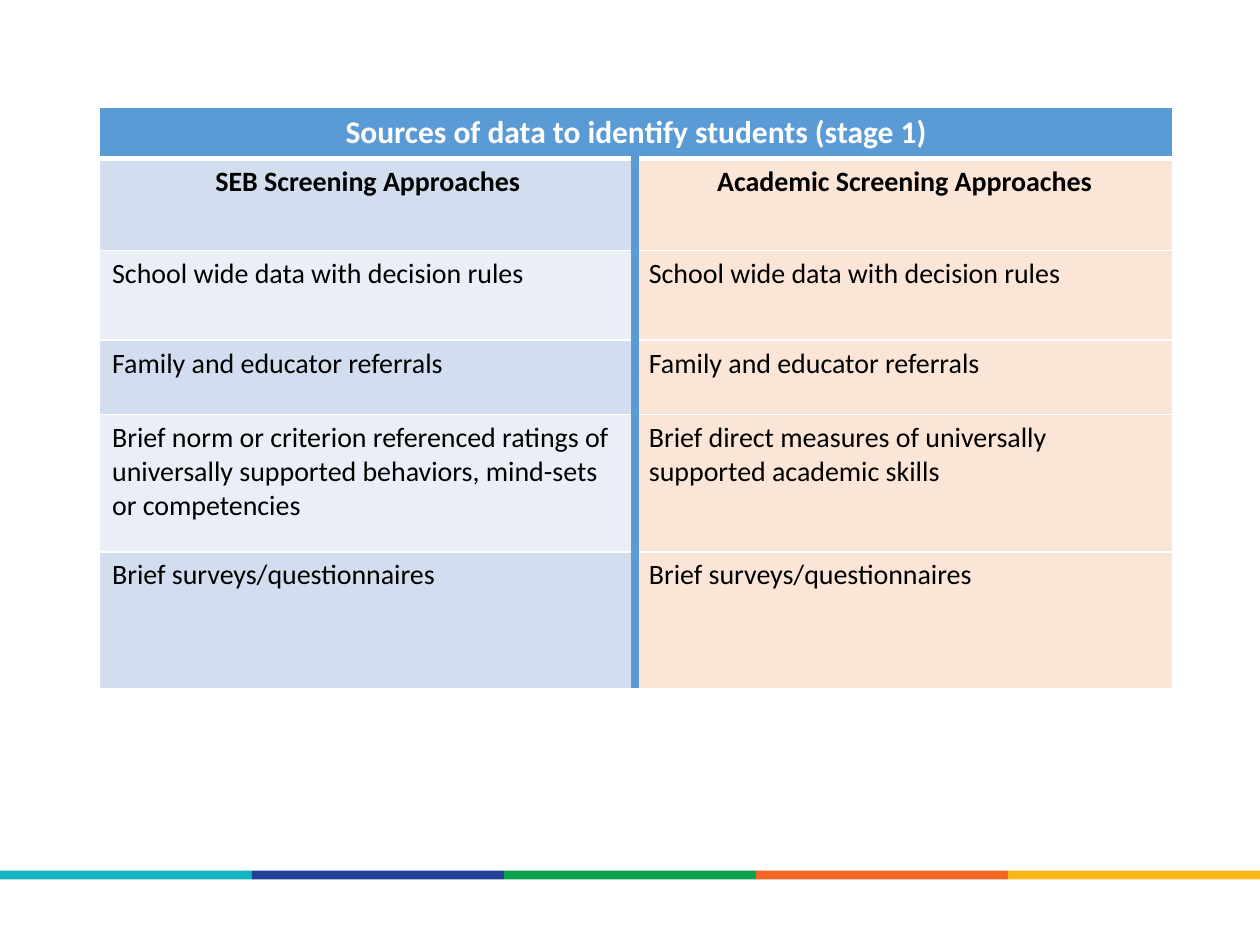
from lxml import etree
from pptx import Presentation
from pptx.dml.color import RGBColor
from pptx.enum.shapes import MSO_CONNECTOR, MSO_SHAPE
from pptx.enum.text import PP_ALIGN
from pptx.oxml.ns import qn
from pptx.util import Inches, Pt

# Content
TITLE = "Sources of data to identify students (stage 1)"
HEADINGS = ("SEB Screening Approaches", "Academic Screening Approaches")
APPROACHES = [
    ("School wide data with decision rules", "School wide data with decision rules"),
    ("Family and educator referrals", "Family and educator referrals"),
    ("Brief norm or criterion referenced ratings of universally supported "
     "behaviors, mind-sets or competencies",
     "Brief direct measures of universally supported academic skills"),
    ("Brief surveys/questionnaires", "Brief surveys/questionnaires"),
]

THEME = {
    "font": "Calibri", "title_size": 18, "body_size": 16,
    "blue": "5B9BD5", "white": "FFFFFF", "black": "000000",
    "seb_bands": ("D2DEEF", "EAEFF7"), "academic": "FBE5D6",
    "stripes": ("14B4C0", "20409A", "0BA14B", "F26522", "F9B817"),
}

# Layout, in inches
SLIDE_W, SLIDE_H = 10, 7.5
TABLE_LEFT, TABLE_TOP, COLUMN_W = 0.79, 0.85, 4.26
ROW_HEIGHTS = (0.41, 0.73, 0.71, 0.59, 1.09, 1.09)
STRIPE_TOP, STRIPE_H = 6.91, 0.07
DIVIDER_X, DIVIDER_TOP, DIVIDER_BOTTOM = 5.04, 1.23, 5.46


def rgb(value):
    return RGBColor.from_string(value)


def set_borders(cell, bottom=1, top=1):
    props = cell._tc.get_or_add_tcPr()
    for side, width in (("L", 1), ("R", 1), ("T", top), ("B", bottom)):
        line = etree.SubElement(props, qn(f"a:ln{side}"), w=str(Pt(width)))
        fill = etree.SubElement(line, qn("a:solidFill"))
        etree.SubElement(fill, qn("a:srgbClr"), val=THEME["white"])


def style_cell(cell, text, fill, color="black", size="body_size", heading=False):
    cell.fill.solid()
    cell.fill.fore_color.rgb = rgb(fill)
    cell.text = text
    paragraph = cell.text_frame.paragraphs[0]
    paragraph.alignment = PP_ALIGN.CENTER if heading else PP_ALIGN.LEFT
    font = paragraph.font
    font.name = THEME["font"]
    font.size = Pt(THEME[size])
    font.bold = heading
    font.color.rgb = rgb(THEME[color])


def add_stripes(slide):
    width = SLIDE_W / len(THEME["stripes"])
    for i, color in enumerate(THEME["stripes"]):
        stripe = slide.shapes.add_shape(
            MSO_SHAPE.RECTANGLE, Inches(i * width), Inches(STRIPE_TOP),
            Inches(width), Inches(STRIPE_H))
        stripe.shadow.inherit = False
        stripe.fill.solid()
        stripe.fill.fore_color.rgb = rgb(color)
        stripe.line.fill.background()


def add_sources_table(slide):
    table = slide.shapes.add_table(
        len(ROW_HEIGHTS), 2, Inches(TABLE_LEFT), Inches(TABLE_TOP),
        Inches(2 * COLUMN_W), Inches(sum(ROW_HEIGHTS))).table
    for column in table.columns:
        column.width = Inches(COLUMN_W)
    for row, height in zip(table.rows, ROW_HEIGHTS):
        row.height = Inches(height)

    # Title row across both columns
    title = table.cell(0, 0)
    title.merge(table.cell(0, 1))
    for col in range(2):
        set_borders(table.cell(0, col), bottom=3)
    style_cell(title, TITLE, THEME["blue"], "white", "title_size", heading=True)

    # Headings and approaches, banded on the left only
    for r, texts in enumerate([HEADINGS, *APPROACHES], start=1):
        fills = (THEME["seb_bands"][(r - 1) % 2], THEME["academic"])
        for c, (text, fill) in enumerate(zip(texts, fills)):
            cell = table.cell(r, c)
            set_borders(cell, top=3 if r == 1 else 1)
            style_cell(cell, text, fill, heading=r == 1)


def add_divider(slide):
    divider = slide.shapes.add_connector(
        MSO_CONNECTOR.STRAIGHT, Inches(DIVIDER_X), Inches(DIVIDER_TOP),
        Inches(DIVIDER_X), Inches(DIVIDER_BOTTOM))
    divider.line.color.rgb = rgb(THEME["blue"])
    divider.line.width = Pt(4.5)
    etree.SubElement(divider._element.spPr, qn("a:effectLst"))


def main():
    deck = Presentation()
    deck.slide_width, deck.slide_height = Inches(SLIDE_W), Inches(SLIDE_H)
    slide = deck.slides.add_slide(deck.slide_layouts[6])
    add_stripes(slide)
    add_sources_table(slide)
    add_divider(slide)
    deck.save("out.pptx")


if __name__ == "__main__":
    main()
